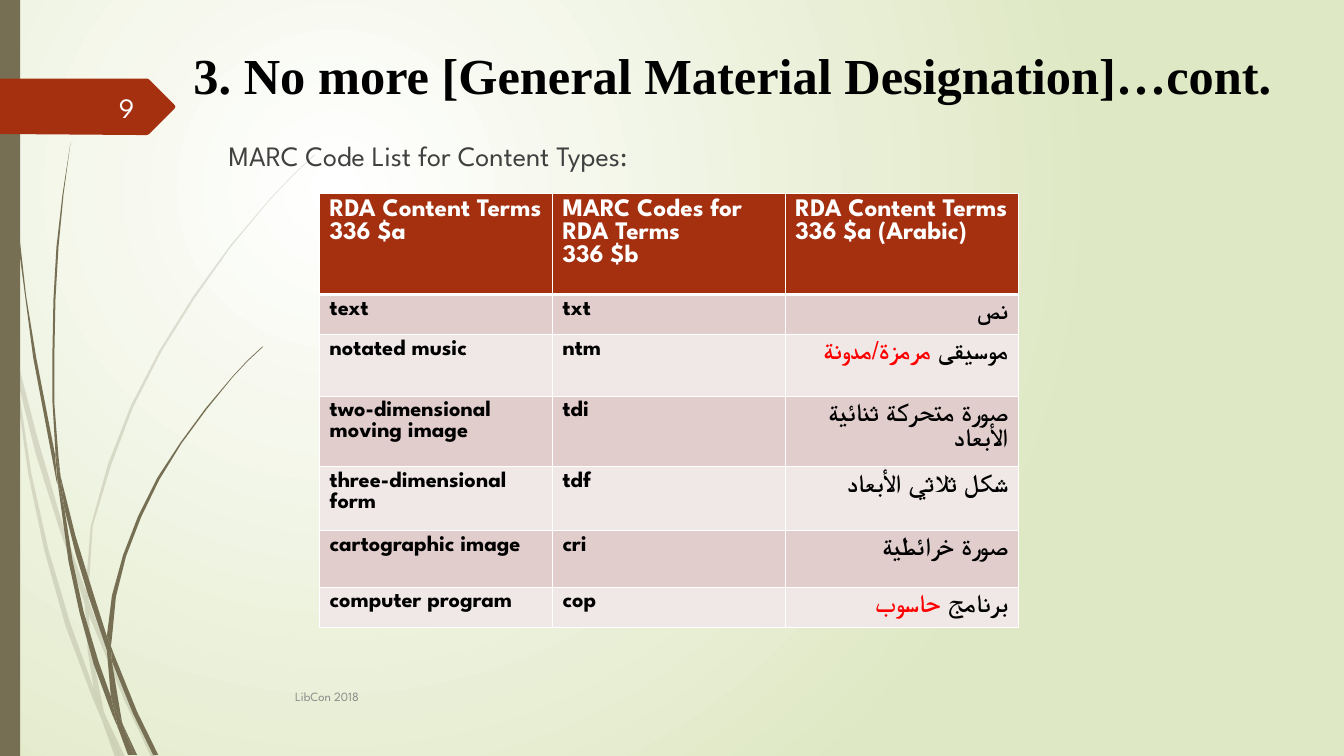
"""Build the slide listing MARC codes for RDA content types."""
from lxml import etree
from pptx import Presentation
from pptx.dml.color import RGBColor
from pptx.enum.shapes import MSO_SHAPE
from pptx.enum.text import MSO_ANCHOR, PP_ALIGN
from pptx.oxml import parse_xml
from pptx.oxml.ns import nsdecls, qn
from pptx.util import Pt

PX = 9144
WIDTH, HEIGHT = 1333, 750
SANS, SERIF = "League Spartan", "Times New Roman"
BLACK = RGBColor(0x00, 0x00, 0x00)
WHITE = RGBColor(0xFF, 0xFF, 0xFF)
NEAR_WHITE = RGBColor(0xFE, 0xFF, 0xFF)
DARK_GREY = RGBColor(0x40, 0x40, 0x40)
GREY = RGBColor(0x8C, 0x8C, 0x8C)
RED = RGBColor(0xFF, 0x00, 0x00)
RUST = RGBColor(0xA5, 0x30, 0x10)
OLIVE = RGBColor(0x76, 0x6F, 0x54)
PALE_GREEN = RGBColor(0xDF, 0xE8, 0xC4)
BAND_DARK = RGBColor(0xE1, 0xCD, 0xCC)
BAND_LIGHT = RGBColor(0xF0, 0xE8, 0xE7)

TITLE = "3. No more [General Material Designation]…cont."
INTRO = "MARC Code List for Content Types:"
FOOTER = "LibCon 2018"
PAGE = "9"

HEADER = [["RDA Content Terms 336 $a"],
          ["MARC Codes for RDA Terms", "336 $b"],
          ["RDA Content Terms 336 $a (Arabic)"]]
TERMS = [
    ("text", "txt", "نص", ""),
    ("notated music", "ntm", "موسيقى ", "مرمزة/مدونة"),
    ("two-dimensional moving image", "tdi", "صورة متحركة ثنائية الأبعاد", ""),
    ("three-dimensional form", "tdf", "شكل ثلاثي الأبعاد", ""),
    ("cartographic image", "cri", "صورة خرائطية", ""),
    ("computer program", "cop", "برنامج ", "حاسوب"),
]
TABLE_LEFT, TABLE_TOP, COL_WIDTH = 317, 192, 231
ROW_HEIGHTS = [100, 37, 61, 62, 58, 56, 39]

PALE_STALKS = [
    [(11, 350), (9, 322), (0, 282), (0, 299), (10, 344)],
    [(58, 522), (84, 599), (85, 586), (62, 520), (37, 434), (14, 345), (17, 376), (35, 449)],
    [(92, 607), (88, 596), (88, 610), (123, 694), (150, 751), (155, 751), (127, 692)],
    [(119, 751), (124, 751), (105, 711)],
    [(93, 683), (70, 619), (48, 545), (31, 469), (17, 376), (11, 350), (28, 470),
     (44, 546), (65, 621), (92, 693), (101, 714), (99, 707)],
    [(84, 599), (87, 646), (93, 683), (96, 692), (105, 711), (103, 706), (91, 646),
     (88, 610), (88, 608)],
    [(88, 584), (92, 522), (110, 462), (132, 404), (160, 349), (193, 296), (229, 245),
     (268, 198), (290, 175), (312, 154), (312, 153), (289, 175), (268, 197), (228, 244),
     (191, 295), (158, 348), (130, 402), (107, 461), (90, 522), (85, 584), (85, 586),
     (88, 596)],
    [(101, 714), (114, 751), (119, 751)],
    [(88, 608), (88, 610), (88, 596), (85, 586), (84, 599)],
    [(96, 692), (93, 683), (99, 707), (101, 714), (119, 751), (105, 711)],
]
DARK_STALKS = [
    [(7, 110), (11, 172), (17, 233), (33, 355), (56, 477), (57, 481), (55, 457), (55, 453),
     (36, 355), (26, 294), (19, 232), (12, 171), (8, 109), (5, 48), (4, 0), (3, 0), (4, 48)],
    [(88, 592), (106, 645), (106, 633), (106, 631), (93, 590), (75, 532), (60, 472),
     (64, 505), (75, 549)],
    [(113, 649), (110, 641), (111, 656), (132, 708), (152, 749), (157, 749), (136, 706)],
    [(110, 691), (98, 657), (83, 607), (72, 556), (64, 505), (57, 477), (68, 557),
     (79, 608), (93, 659), (111, 708), (117, 722), (116, 717)],
    [(60, 472), (58, 453), (54, 401), (54, 349), (55, 297), (58, 245), (63, 193), (70, 141),
     (62, 193), (56, 245), (53, 297), (52, 349), (52, 399), (55, 449)],
    [(133, 749), (136, 749), (122, 719)],
    [(57, 477), (64, 505), (60, 472), (55, 449), (55, 453)],
    [(111, 633), (115, 592), (125, 552), (140, 513), (158, 476), (180, 440), (205, 406),
     (231, 374), (245, 359), (261, 344), (260, 344), (245, 358), (231, 373), (204, 405),
     (179, 439), (156, 474), (137, 512), (122, 551), (111, 591), (106, 631), (110, 641)],
    [(117, 722), (127, 749), (131, 749)],
    [(106, 645), (110, 691), (116, 706), (122, 719), (121, 716), (111, 656), (109, 651)],
    [(106, 645), (109, 651), (111, 656), (110, 641), (106, 631)],
    [(116, 706), (110, 691), (116, 717), (117, 722), (130, 749), (133, 749), (122, 719)],
]
PAGE_TAG = [(173, 108), (148, 133), (146, 134), (136, 134), (0, 133), (0, 78), (146, 78),
            (148, 79), (173, 104), (174, 106)]


def paint(sp, color, opacity=100):
    sp.shadow.inherit = False
    sp.fill.solid()
    sp.fill.fore_color.rgb = color
    sp.line.fill.background()
    if opacity < 100:
        clr = sp._element.spPr.find(qn("a:solidFill"))[0]
        etree.SubElement(clr, qn("a:alpha"), val=str(opacity * 1000))


def add_outline(shapes, points, color, opacity=100):
    builder = shapes.build_freeform(*points[0], scale=PX)
    builder.add_line_segments(points[1:], close=True)
    paint(builder.convert_to_shape(), color, opacity)


def style(p, size, color, name=SANS, bold=False, align=PP_ALIGN.LEFT):
    p.alignment = align
    p.font.size, p.font.name, p.font.bold = Pt(size), name, bold
    p.font.color.rgb = color


def add_text(s, box, text, anchor, *look, **more):
    tf = s.shapes.add_textbox(*[v * PX for v in box]).text_frame
    tf.word_wrap = True
    tf.vertical_anchor = anchor
    p = tf.paragraphs[0]
    p.text = text
    style(p, *look, **more)
    return p


def finish_cell(cell, row, fill):
    cell.fill.solid()
    cell.fill.fore_color.rgb = fill
    thick = {0: "lnB", 1: "lnT"}.get(row)
    for i, side in enumerate(("lnL", "lnR", "lnT", "lnB")):
        width = Pt(3 if side == thick else 1)
        cell._tc.get_or_add_tcPr().insert(i, parse_xml(
            f'<a:{side} {nsdecls("a")} w="{width}"><a:solidFill>'
            f'<a:srgbClr val="{WHITE}"/></a:solidFill></a:{side}>'))


def add_arabic(p, plain, marked):
    style(p, 18, BLACK, SERIF, True, PP_ALIGN.RIGHT)
    for text, color in ((plain, BLACK), (marked, RED)):
        if text:
            r = p.add_run()
            r.text = text
            r.font.color.rgb = color


def add_terms_table(s):
    frame = s.shapes.add_table(len(ROW_HEIGHTS), 3, TABLE_LEFT * PX, TABLE_TOP * PX,
                               3 * COL_WIDTH * PX, sum(ROW_HEIGHTS) * PX)
    table = frame.table
    for col in table.columns:
        col.width = COL_WIDTH * PX
    for row, height in zip(table.rows, ROW_HEIGHTS):
        row.height = height * PX
    for c, lines in enumerate(HEADER):
        cell = table.cell(0, c)
        cell.text = "\n".join(lines)
        for p in cell.text_frame.paragraphs:
            style(p, 18, WHITE, bold=True)
        finish_cell(cell, 0, RUST)
    for i, (term, code, plain, marked) in enumerate(TERMS, 1):
        cells = [table.cell(i, c) for c in range(3)]
        for cell, text in zip(cells, (term, code)):
            cell.text = text
            style(cell.text_frame.paragraphs[0], 16, BLACK, bold=True)
        add_arabic(cells[2].text_frame.paragraphs[0], plain, marked)
        for cell in cells:
            finish_cell(cell, i, BAND_DARK if i % 2 else BAND_LIGHT)


def set_background(s):
    fill = s.background.fill
    fill.gradient()
    for stop, color in zip(fill.gradient_stops, (WHITE, PALE_GREEN)):
        stop.color.rgb = color
    grad = s._element.find(".//" + qn("a:gradFill"))
    grad.replace(grad.find(qn("a:lin")), parse_xml(
        f'<a:path {nsdecls("a")} path="circle"><a:fillToRect l="50000" t="50000" '
        'r="100000" b="100000"/></a:path>'))


def main():
    prs = Presentation()
    prs.slide_width, prs.slide_height = WIDTH * PX, HEIGHT * PX
    s = prs.slides.add_slide(prs.slide_layouts[6])
    set_background(s)
    for stalks, opacity in ((PALE_STALKS, 20), (DARK_STALKS, 100)):
        group = s.shapes.add_group_shape()
        for points in stalks:
            add_outline(group.shapes, points, OLIVE, opacity)
    paint(s.shapes.add_shape(MSO_SHAPE.RECTANGLE, 0, 0, 20 * PX, HEIGHT * PX), OLIVE)
    add_outline(s.shapes, PAGE_TAG, RUST)
    top, middle = MSO_ANCHOR.TOP, MSO_ANCHOR.MIDDLE
    p = add_text(s, (217, 133, 900, 487), INTRO, top, 20, DARK_GREY)
    p.space_before = Pt(10)
    add_terms_table(s)
    add_text(s, (283, 671, 833, 40), FOOTER, middle, 9, GREY)
    add_text(s, (58, 86, 85, 40), PAGE, middle, 20, NEAR_WHITE, align=PP_ALIGN.RIGHT)
    add_text(s, (182, 39, 1102, 64), TITLE, top, 36, BLACK, SERIF, bold=True)
    prs.save("out.pptx")


if __name__ == "__main__":
    main()
